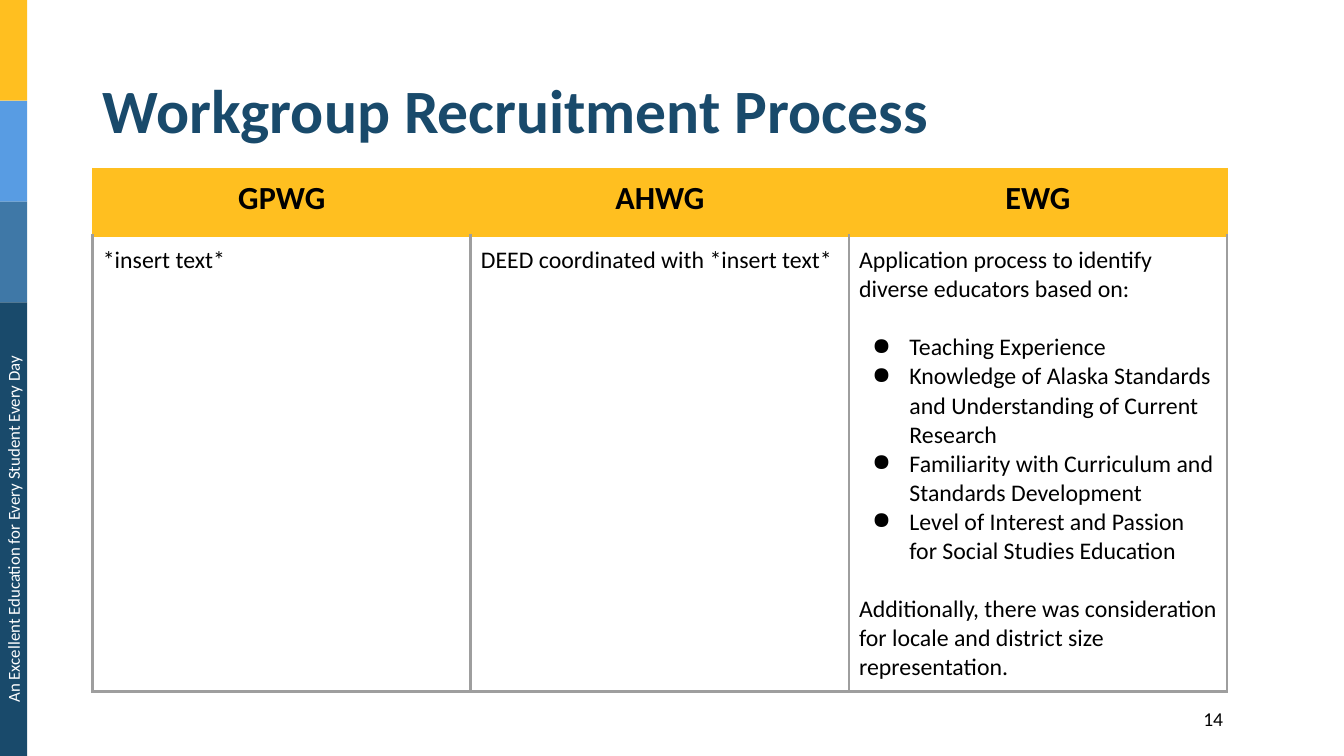
"""Build the workgroup recruitment slide."""
from dataclasses import dataclass

from lxml.etree import SubElement
from pptx import Presentation
from pptx.dml.color import RGBColor
from pptx.enum.shapes import MSO_SHAPE
from pptx.enum.text import MSO_ANCHOR, PP_ALIGN
from pptx.oxml.ns import qn
from pptx.util import Inches, Pt

NAVY, GOLD, GRAY, BLACK, WHITE = "194A6B", "FFBF20", "9E9E9E", "000000", "FFFFFF"
FACE = "Calibri"


@dataclass
class Band:
    top: float
    height: float
    color: str


@dataclass
class Label:
    text: str
    left: float
    top: float
    width: float
    height: float
    size: float
    color: str
    align: PP_ALIGN
    bold: bool = False
    turn: float = 0
    space: float = 1


@dataclass
class Line:
    text: str
    bullet: bool = False
    gap: float = 0


@dataclass
class Group:
    name: str
    lines: list[Line]


BANDS = [Band(0, 1, GOLD), Band(1, 1, "589CE3"), Band(2, 1, "3F78A7"), Band(3, 4.5, NAVY)]
LABELS = [
    Label("14", 11.38, 6.96, 0.85, 0.34, 14, BLACK, PP_ALIGN.RIGHT),
    Label("An Excellent Education for Every Student Every Day",
          -2.12, 5.1, 4.5, 0.3, 12, WHITE, PP_ALIGN.CENTER, turn=270),
    Label("Workgroup Recruitment Process", 0.92, 0.4, 11.5, 1.45, 44, NAVY,
          PP_ALIGN.LEFT, bold=True, space=0.9),
]
GAP = 20.75
GROUPS = [
    Group("GPWG", [Line("*insert text*")]),
    Group("AHWG", [Line("DEED coordinated with *insert text*")]),
    Group("EWG", [
        Line("Application process to identify diverse educators based on:"),
        Line("Teaching Experience", True, GAP),
        Line("Knowledge of Alaska Standards and Understanding of Current Research", True),
        Line("Familiarity with Curriculum and Standards Development", True),
        Line("Level of Interest and Passion for Social Studies Education", True),
        Line("Additionally, there was consideration for locale and district size "
             "representation.", gap=GAP),
    ]),
]


def paint(target, color: str) -> None:
    """Set a solid fill or font colour."""
    if hasattr(target, "solid"):
        target.solid()
        target = target.fore_color
    else:
        target = target.color
    target.rgb = RGBColor.from_string(color)


def style(para, size: float, color: str, bold: bool = False) -> None:
    """Set the font of a paragraph."""
    font = para.font
    font.name, font.size, font.bold = FACE, Pt(size), bold
    paint(font, color)


def draw_band(slide, band: Band) -> None:
    """Draw one block of the side strip."""
    shape = slide.shapes.add_shape(MSO_SHAPE.RECTANGLE, 0, Inches(band.top),
                                   Inches(0.27), Inches(band.height))
    shape.shadow.inherit = False
    shape.line.fill.background()
    paint(shape.fill, band.color)


def draw_label(slide, label: Label) -> None:
    """Draw one text box."""
    box = slide.shapes.add_textbox(Inches(label.left), Inches(label.top),
                                   Inches(label.width), Inches(label.height))
    box.rotation = label.turn
    frame = box.text_frame
    frame.word_wrap = True
    frame.vertical_anchor = MSO_ANCHOR.MIDDLE
    para = frame.paragraphs[0]
    para.text, para.alignment, para.line_spacing = label.text, label.align, label.space
    style(para, label.size, label.color, label.bold)


def add_bullet(para) -> None:
    """Give a paragraph a round bullet and a hanging indent."""
    props = para._p.get_or_add_pPr()
    props.set("marL", str(Inches(0.5)))
    props.set("indent", str(Inches(-0.37)))
    tint = SubElement(props, qn("a:buClr"))
    SubElement(tint, qn("a:srgbClr"), val=BLACK)
    SubElement(props, qn("a:buChar"), char="●")


def set_edge(cell, side: str, color: str, width: float) -> None:
    """Draw one border of a cell."""
    edge = SubElement(cell._tc.get_or_add_tcPr(), qn(f"a:ln{side}"), w=str(Pt(width)))
    fill = SubElement(edge, qn("a:solidFill"))
    SubElement(fill, qn("a:srgbClr"), val=color)


def pad(cell) -> None:
    """Set equal cell margins."""
    cell.margin_left = cell.margin_right = Inches(0.1)
    cell.margin_top = cell.margin_bottom = Inches(0.1)


def fill_head(cell, name: str) -> None:
    """Write one heading cell."""
    pad(cell)
    for side in "LRTB":
        set_edge(cell, side, GOLD, 2.25 if side == "B" else 0.75)
    paint(cell.fill, GOLD)
    para = cell.text_frame.paragraphs[0]
    para.text, para.alignment = name, PP_ALIGN.CENTER
    style(para, 23, BLACK, True)


def fill_body(cell, lines: list[Line]) -> None:
    """Write one body cell."""
    pad(cell)
    for side in "LRTB":
        set_edge(cell, side, GOLD if side == "T" else GRAY, 2.25)
    cell.fill.background()
    frame = cell.text_frame
    for num, line in enumerate(lines):
        para = frame.add_paragraph() if num else frame.paragraphs[0]
        para.text = line.text
        if line.bullet:
            add_bullet(para)
        if line.gap:
            para.space_before = Pt(line.gap)
        style(para, 17, BLACK)


def draw_table(slide, groups: list[Group]) -> None:
    """Draw the table with one column for each group."""
    frame = slide.shapes.add_table(2, len(groups), Inches(0.92), Inches(1.67),
                                   Inches(11.25), Inches(5.19))
    table = frame.table
    table.rows[0].height, table.rows[1].height = Inches(0.67), Inches(4.52)
    for col, group in enumerate(groups):
        table.columns[col].width = Inches(3.75)
        fill_head(table.cell(0, col), group.name)
        fill_body(table.cell(1, col), group.lines)


def main() -> None:
    """Build and save the slide."""
    deck = Presentation()
    deck.slide_width, deck.slide_height = Inches(13.33), Inches(7.5)
    slide = deck.slides.add_slide(deck.slide_layouts[6])
    for band in BANDS:
        draw_band(slide, band)
    for label in LABELS:
        draw_label(slide, label)
    draw_table(slide, GROUPS)
    deck.save("out.pptx")


if __name__ == "__main__":
    main()
